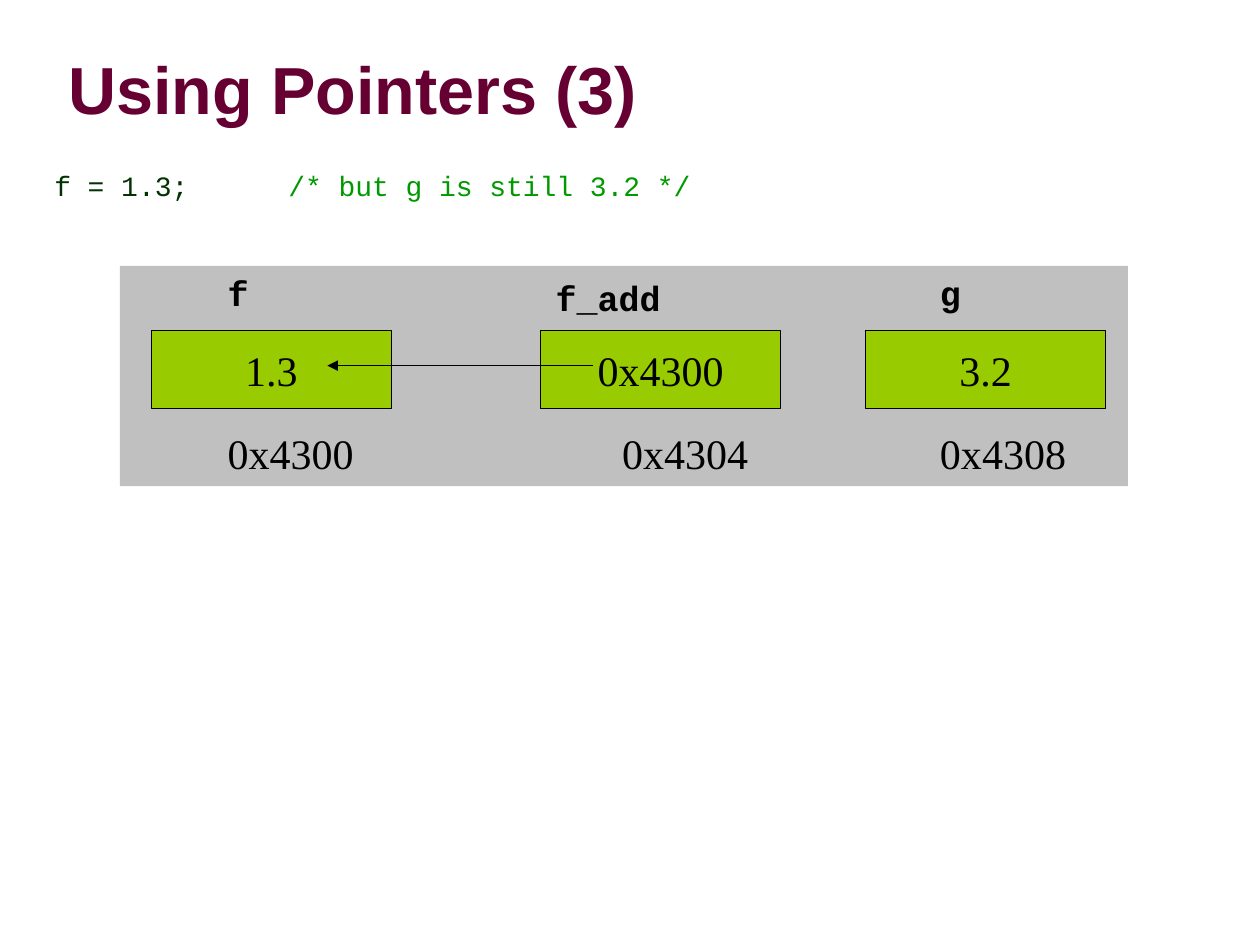
from pptx import Presentation
from pptx.dml.color import RGBColor
from pptx.enum.shapes import MSO_CONNECTOR, MSO_SHAPE
from pptx.enum.text import MSO_ANCHOR, MSO_AUTO_SIZE, PP_ALIGN
from pptx.oxml.ns import qn
from pptx.util import Cm, Pt


def color(hex_string):
    return RGBColor.from_string(hex_string)


class MemorySlide:
    SANS, MONO, SERIF = "Arial", "Courier New", "Times New Roman"
    INK, TITLE, CODE, COMMENT = "000000", "660033", "003300", "009900"
    PANEL, CELL = "C0C0C0", "99CC00"

    def __init__(self, presentation):
        self.slide = presentation.slides.add_slide(presentation.slide_layouts[1])
        self.shapes = self.slide.shapes

    def style(self, font, name, size, hex_string, bold=False):
        font.name, font.size, font.bold = name, Pt(size), bold
        font.color.rgb = color(hex_string)

    def place(self, shape, left, top, width, height):
        shape.left, shape.top = Cm(left), Cm(top)
        shape.width, shape.height = Cm(width), Cm(height)
        shape.text_frame.auto_size = MSO_AUTO_SIZE.NONE

    def title(self, text):
        shape = self.shapes.title
        self.place(shape, 1.12, 0.84, 24.2, 1.88)
        shape.text_frame.text = text
        shape.text_frame.vertical_anchor = MSO_ANCHOR.MIDDLE
        paragraph = shape.text_frame.paragraphs[0]
        paragraph.alignment = PP_ALIGN.LEFT
        self.style(paragraph.font, self.SANS, 38, self.TITLE, bold=True)

    def code(self, statement, comment):
        shape = self.slide.placeholders[1]
        self.place(shape, 0.81, 3.4, 23.09, 14.53)
        paragraph = shape.text_frame.paragraphs[0]
        paragraph.line_spacing, paragraph.space_before = 0.8, Pt(5)
        properties = paragraph._p.get_or_add_pPr()
        properties.set("marL", str(Cm(0.94)))
        properties.set("indent", str(-Cm(0.91)))
        properties.append(properties.makeelement(qn("a:buNone"), {}))
        for text, hex_string in ((statement + "\t\t", self.CODE), (comment, self.COMMENT)):
            run = paragraph.add_run()
            run.text = text
            self.style(run.font, self.MONO, 16, hex_string)

    def rectangle(self, left, top, width, height, fill, outlined=False):
        shape = self.shapes.add_shape(
            MSO_SHAPE.RECTANGLE, Cm(left), Cm(top), Cm(width), Cm(height))
        shape.shadow.inherit = False
        shape.fill.solid()
        shape.fill.fore_color.rgb = color(fill)
        if outlined:
            shape.line.color.rgb = color(self.INK)
            shape.line.width = Pt(0.75)
        else:
            shape.line.fill.background()
        return shape

    def label(self, text, left, top, width, font_name, size, bold=False):
        box = self.shapes.add_textbox(Cm(left), Cm(top), Cm(width), Cm(1.1))
        box.text_frame.word_wrap = False
        box.text_frame.text = text
        self.style(box.text_frame.paragraphs[0].font, font_name, size, self.INK, bold)

    def variable(self, name, value, address, cell_left, name_left, name_top, address_left):
        """Add a memory cell with its name above and its address below."""
        name_width = 0.42 * len(name) + 0.51
        self.label(name, name_left, name_top, name_width, self.MONO, 20, bold=True)
        self.label(address, address_left, 8.49, 3.2, self.SERIF, 24)
        cell = self.rectangle(cell_left, 6.67, 4.84, 1.57, self.CELL, outlined=True)
        cell.text_frame.word_wrap = False
        cell.text_frame.text = value
        cell.text_frame.vertical_anchor = MSO_ANCHOR.MIDDLE
        paragraph = cell.text_frame.paragraphs[0]
        paragraph.alignment = PP_ALIGN.CENTER
        self.style(paragraph.font, self.SERIF, 24, self.INK)

    def arrow(self, start_x, end_x, y):
        connector = self.shapes.add_connector(
            MSO_CONNECTOR.STRAIGHT, Cm(start_x), Cm(y), Cm(end_x), Cm(y))
        connector.line.color.rgb = color(self.INK)
        connector.line.width = Pt(0.75)
        line = connector.line._get_or_add_ln()
        line.append(line.makeelement(qn("a:tailEnd"), {"type": "triangle"}))
        properties = connector._element.spPr
        properties.append(properties.makeelement(qn("a:effectLst"), {}))


def main():
    presentation = Presentation()
    presentation.slide_width, presentation.slide_height = Cm(25.4), Cm(19.05)
    memory = MemorySlide(presentation)
    memory.title("Using Pointers (3)")
    memory.code("f = 1.3;", "/* but g is still 3.2 */")
    memory.rectangle(2.42, 5.36, 20.32, 4.44, memory.PANEL)
    for variable in (
        ("f", "1.3", "0x4300", 3.05, 4.34, 5.35, 4.34),
        ("f_addr", "0x4300", "0x4304", 10.9, 10.95, 5.44, 12.29),
        ("g", "3.2", "0x4308", 17.45, 18.7, 5.35, 18.7),
    ):
        memory.variable(*variable)
    memory.arrow(11.95, 6.6, 7.37)
    presentation.save("out.pptx")


if __name__ == "__main__":
    main()
